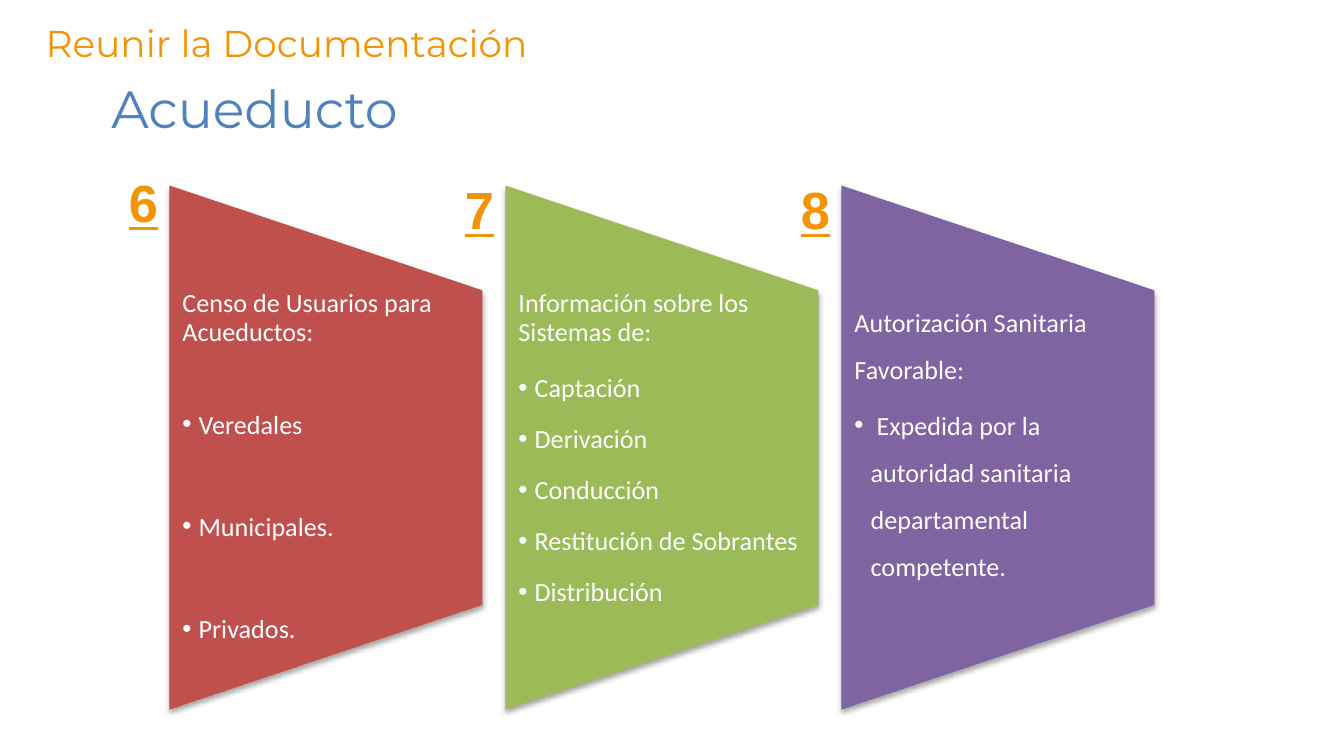
from lxml import etree
from pptx import Presentation
from pptx.dml.color import RGBColor
from pptx.enum import shapes, text
from pptx.oxml import ns
from pptx.util import Inches, Pt

COLORS = {
    "orange": "F19408",
    "blue": "4F81BD",
    "red": "C0504D",
    "green": "9BBB59",
    "purple": "8064A2",
    "white": "FFFFFF",
    "black": "000000",
}
TITLE = "Reunir la Documentación"
SUBTITLE = "Acueducto"
# Spacing: line spacing of the heading, points after it, points after each item
CARDS = [
    {"number": "6", "number_top": 1.22, "color": "red",
     "heading": "Censo de Usuarios para Acueductos:",
     "items": ["Veredales", "Municipales.", "Privados."],
     "spacing": (0.9, 24.5, 29.5)},
    {"number": "7", "number_top": 1.27, "color": "green",
     "heading": "Información sobre los Sistemas de:",
     "items": ["Captación", "Derivación", "Conducción",
               "Restitución de Sobrantes", "Distribución"],
     "spacing": (0.9, 4.9, 2.1)},
    {"number": "8", "number_top": 1.27, "color": "purple",
     "heading": "Autorización Sanitaria Favorable:",
     "items": [" Expedida por la autoridad sanitaria departamental competente."],
     "spacing": (1.5, 4.9, 2.1)},
]
SLIDE_WIDTH = 10
SLIDE_HEIGHT = SLIDE_WIDTH * 9 / 16
CARD_LEFT, CARD_TOP, CARD_STEP = 1.26, 1.38, 2.5
CARD_WIDTH, CARD_HEIGHT = 2.33, 3.9
TEXT_TOP, TEXT_HEIGHT = 2.16, 2.34
NUMBER_OFFSET = 0.4


def rgb(name):
    return RGBColor.from_string(COLORS[name])


def style(paragraph, size, font_name, color):
    for run in paragraph.runs:
        run.font.size = Pt(size)
        run.font.name = font_name
        run.font.color.rgb = rgb(color)


def place(shape, left, top, width, height):
    shape.left, shape.top = Inches(left), Inches(top)
    shape.width, shape.height = Inches(width), Inches(height)


def add_text_box(slide, left, top, width, height):
    box = slide.shapes.add_textbox(
        Inches(left), Inches(top), Inches(width), Inches(height))
    box.text_frame.word_wrap = True
    return box


def add_shadow(shape):
    """Give the shape a soft shadow straight below it."""
    shape.shadow.inherit = False
    effects = shape._element.spPr.find(ns.qn("a:effectLst"))
    shadow = etree.SubElement(
        effects, ns.qn("a:outerShdw"), blurRad=str(Pt(3.1)), dist=str(Pt(1.8)),
        dir="5400000", rotWithShape="0")
    color = etree.SubElement(shadow, ns.qn("a:srgbClr"), val=COLORS["black"])
    etree.SubElement(color, ns.qn("a:alpha"), val="35000")


def add_bullet(paragraph):
    properties = paragraph._p.get_or_add_pPr()
    properties.set("marL", str(Inches(0.12)))
    properties.set("indent", str(-Inches(0.12)))
    etree.SubElement(properties, ns.qn("a:buFont"), typeface="Arial")
    etree.SubElement(properties, ns.qn("a:buChar"), char="•")


def add_panel(slide, left, color):
    """Add the trapezoid, a flowchart shape turned a quarter to the left."""
    center_x = left + CARD_WIDTH / 2
    center_y = CARD_TOP + CARD_HEIGHT / 2
    panel = slide.shapes.add_shape(
        shapes.MSO_SHAPE.FLOWCHART_MANUAL_OPERATION,
        Inches(center_x - CARD_HEIGHT / 2), Inches(center_y - CARD_WIDTH / 2),
        Inches(CARD_HEIGHT), Inches(CARD_WIDTH))
    panel.rotation = 270
    panel.fill.solid()
    panel.fill.fore_color.rgb = rgb(color)
    panel.line.fill.background()
    add_shadow(panel)


def add_card_text(slide, left, card):
    frame = add_text_box(
        slide, left, TEXT_TOP, CARD_WIDTH, TEXT_HEIGHT).text_frame
    frame.margin_top = frame.margin_bottom = 0
    heading_spacing, after_heading, after_item = card["spacing"]
    heading = frame.paragraphs[0]
    heading.text = card["heading"]
    heading.line_spacing = heading_spacing
    heading.space_after = Pt(after_heading)
    for item in card["items"]:
        paragraph = frame.add_paragraph()
        paragraph.text = item
        paragraph.level = 1
        paragraph.line_spacing = 1.5
        paragraph.space_after = Pt(after_item)
        add_bullet(paragraph)
    for paragraph in frame.paragraphs:
        style(paragraph, 14, "Calibri", "white")


def add_number(slide, left, card):
    frame = add_text_box(slide, left - NUMBER_OFFSET, card["number_top"],
                         0.38, 0.32).text_frame
    paragraph = frame.paragraphs[0]
    paragraph.text = card["number"]
    style(paragraph, 28, "Arial", "orange")
    paragraph.runs[0].font.bold = True
    paragraph.runs[0].font.underline = True


def main():
    presentation = Presentation()
    presentation.slide_width = Inches(SLIDE_WIDTH)
    presentation.slide_height = Inches(SLIDE_HEIGHT)
    slide = presentation.slides.add_slide(presentation.slide_layouts[5])

    title = slide.shapes.title
    place(title, 0.24, 0.1, 4.26, 0.43)
    title.text_frame.text = TITLE
    title.text_frame.auto_size = text.MSO_AUTO_SIZE.NONE
    title.text_frame.vertical_anchor = text.MSO_ANCHOR.TOP
    title.text_frame.paragraphs[0].alignment = text.PP_ALIGN.LEFT
    style(title.text_frame.paragraphs[0], 20, "Montserrat", "orange")

    subtitle = add_text_box(slide, 0.73, 0.52, 2.63, 0.57).text_frame
    subtitle.text = SUBTITLE
    style(subtitle.paragraphs[0], 28, "Montserrat", "blue")

    for index, card in enumerate(CARDS):
        left = CARD_LEFT + index * CARD_STEP
        add_panel(slide, left, card["color"])
        add_card_text(slide, left, card)
        add_number(slide, left, card)

    presentation.save("out.pptx")


if __name__ == "__main__":
    main()
